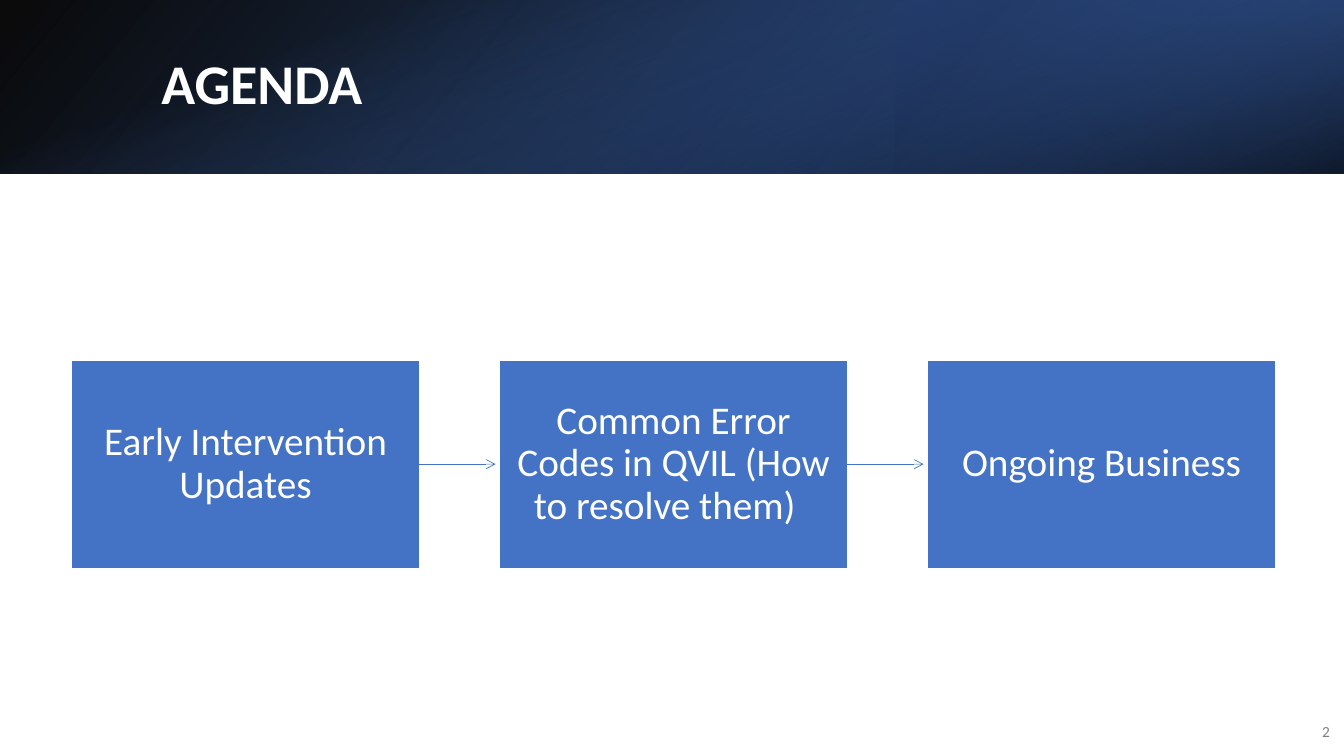
from dataclasses import dataclass

from lxml import etree
from pptx import Presentation
from pptx.dml.color import RGBColor
from pptx.enum.shapes import MSO_CONNECTOR, MSO_SHAPE
from pptx.enum.text import MSO_ANCHOR, MSO_AUTO_SIZE, PP_ALIGN
from pptx.oxml.ns import qn
from pptx.util import Inches, Pt

RECT = MSO_SHAPE.RECTANGLE
LINE = MSO_CONNECTOR.STRAIGHT
MIDDLE = MSO_ANCHOR.MIDDLE
FIXED = MSO_AUTO_SIZE.NONE
LEFT, CENTER, RIGHT = PP_ALIGN.LEFT, PP_ALIGN.CENTER, PP_ALIGN.RIGHT
BOX_RIGHT = 3
TITLE_ONLY = 5


@dataclass(frozen=True)
class Theme:
    font: str = "Calibri"
    black: str = "000000"
    white: str = "FFFFFF"
    grey: str = "808080"
    blue: str = "4472C4"
    deep: str = "2F5597"
    navy: str = "203864"
    title: int = 40
    body: int = 28
    small: int = 11


THEME = Theme()
WIDTH, HEIGHT = Inches(13.33), Inches(7.5)
BAND = Inches(1.72)
TOPICS = [
    "Early Intervention Updates",
    "Common Error Codes in QVIL (How to resolve them)  ",
    "Ongoing Business",
]


def rgb(code):
    return RGBColor.from_string(code)


def write(frame, text, size, color, align, bold=False, pad=None, **para):
    frame.text = text
    form = {"word_wrap": True, "auto_size": FIXED, "vertical_anchor": MIDDLE}
    if pad:
        sides = ("left", "top", "right", "bottom")
        form.update({f"margin_{side}": Inches(gap) for side, gap in zip(sides, pad)})
    line = frame.paragraphs[0]
    font = line.font
    for item, values in (
        (frame, form),
        (line, {"alignment": align, **para}),
        (font, {"name": THEME.font, "size": Pt(size), "bold": bold}),
    ):
        for name, value in values.items():
            setattr(item, name, value)
    font.color.rgb = rgb(color)


def shade(shape, stops, angle):
    """Fill with (place, colour, opacity) stops, in percent, at a clockwise angle."""
    fill = shape.fill
    fill.gradient()
    fill.gradient_angle = 360 - angle
    for stop, (place, color, alpha) in zip(fill.gradient_stops, stops):
        stop.position = place / 100
        stop.color.rgb = rgb(color)
    tints = shape._element.spPr.iter(qn("a:srgbClr"))
    for tint, (place, color, alpha) in zip(tints, stops):
        etree.SubElement(tint, qn("a:alpha"), val=str(alpha * 1000))


def add_band(slide, left, top, width, height):
    third = width // 3
    turned = (left + (width - height) // 2, top + (height - width) // 2, height, width)
    layers = [
        ((left, top, width, height), 0, True, 140,
         [(0, THEME.black, 96), (100, THEME.deep, 100)]),
        ((left + width - third, top, third, height), 180, True, 320,
         [(19, THEME.navy, 68), (100, THEME.blue, 79)]),
        (turned, 90, False, 340,
         [(23, THEME.blue, 0), (99, THEME.black, 74)]),
    ]
    for place, turn, flip, angle, stops in layers:
        layer = slide.shapes.add_shape(RECT, *place)
        layer.shadow.inherit = False
        layer.line.fill.background()
        layer.rotation = turn
        if flip:
            layer._element.spPr.xfrm.set("flipH", "1")
        shade(layer, stops, angle)

    title = slide.shapes.title
    layer._element.addnext(title._element)
    place = {"left": left + Inches(1.5), "top": top + Inches(0.38),
             "width": Inches(10.98), "height": Inches(0.96)}
    for name, value in place.items():
        setattr(title, name, value)
    write(title.text_frame, "AGENDA", THEME.title, THEME.white, LEFT,
          bold=True, line_spacing=0.9)


def add_arrow(slide, box, end):
    mid = box.top + box.height // 2
    arrow = slide.shapes.add_connector(LINE, box.left + box.width, mid, end, mid)
    arrow.begin_connect(box, BOX_RIGHT)
    arrow.line.color.rgb = rgb(THEME.blue)
    arrow.line.width = Pt(0.5)
    etree.SubElement(arrow.line._get_or_add_ln(), qn("a:tailEnd"), type="arrow")
    etree.SubElement(arrow._element.spPr, qn("a:effectLst"))


def add_flow(slide, left, top, width, height):
    wide = Inches(3.45)
    step = (width - wide) // (len(TOPICS) - 1)
    for index, topic in enumerate(TOPICS):
        box = slide.shapes.add_shape(RECT, left + index * step, top, wide, height)
        box.shadow.inherit = False
        box.fill.solid()
        box.fill.fore_color.rgb = rgb(THEME.blue)
        box.line.color.rgb = rgb(THEME.white)
        box.line.width = Pt(1)
        write(box.text_frame, topic, THEME.body, THEME.white, CENTER,
              pad=(0.17, 0.18, 0.17, 0.18), line_spacing=0.9)
        if index < len(TOPICS) - 1:
            add_arrow(slide, box, box.left + step - Inches(0.04))


def add_number(slide, left, top, width, height):
    box = slide.shapes.add_textbox(left, top, width, height)
    write(box.text_frame, "2", THEME.small, THEME.grey, RIGHT, space_after=Pt(6))


def main():
    deck = Presentation()
    deck.slide_width, deck.slide_height = WIDTH, HEIGHT
    slide = deck.slides.add_slide(deck.slide_layouts[TITLE_ONLY])
    add_band(slide, 0, 0, WIDTH, BAND)
    add_flow(slide, Inches(0.71), Inches(3.57), Inches(11.94), Inches(2.07))
    add_number(slide, Inches(12.8), Inches(7.06), Inches(0.49), Inches(0.4))
    deck.save("out.pptx")


if __name__ == "__main__":
    main()
